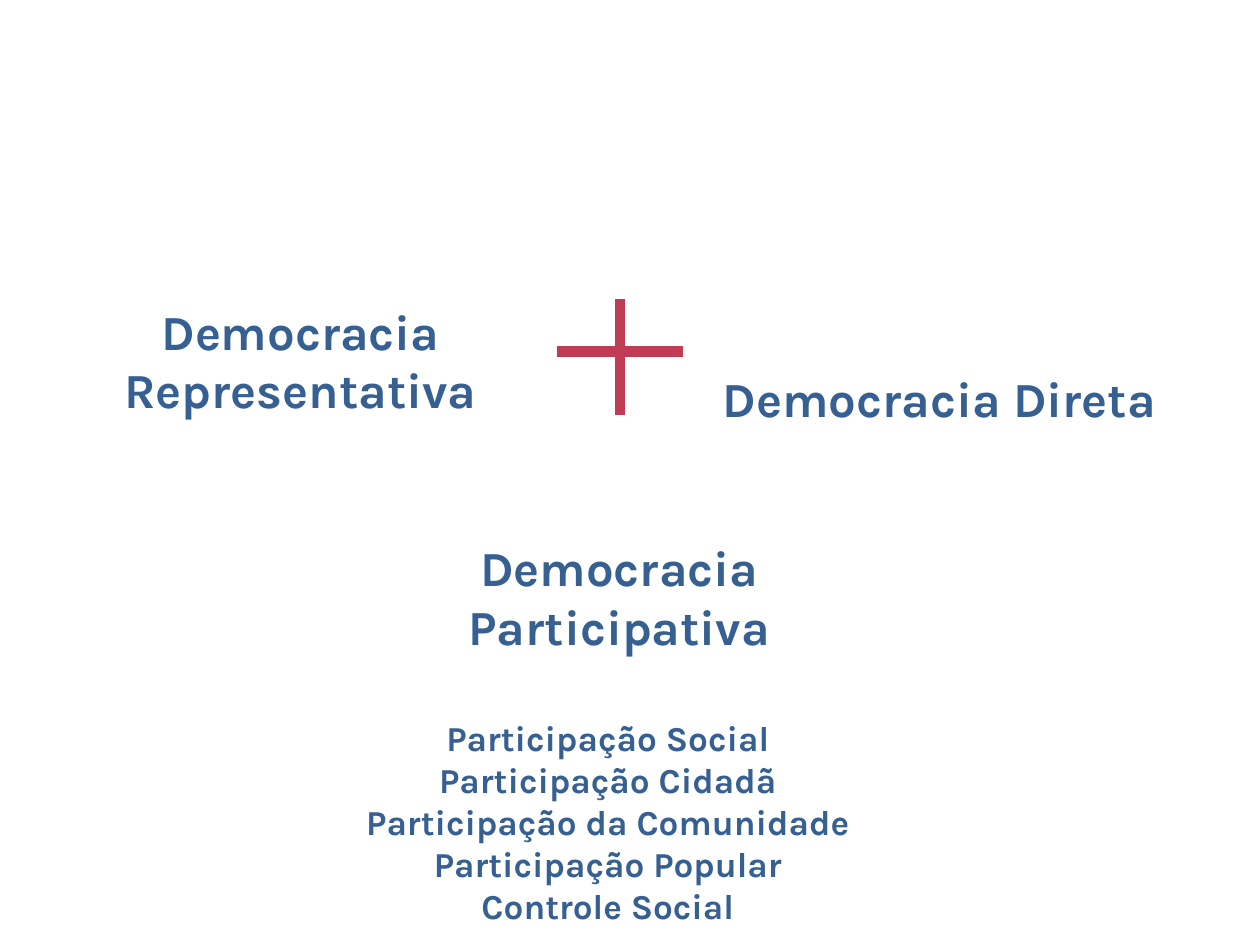
import dataclasses
import pptx
import pptx.util
import pptx.dml.color
import pptx.enum.shapes
import pptx.enum.text
import pptx.oxml.ns
from lxml import etree

Inches = pptx.util.Inches
Anchor = pptx.enum.text.MSO_ANCHOR


@dataclasses.dataclass(frozen=True)
class Theme:
    """Colours, font and sizes of the slide."""
    blue: str = "376092"
    red: str = "C03C55"
    face: str = "Karla"
    head: int = 28
    list: int = 20
    line: int = 6


THEME = Theme()


def color(code):
    """Return the colour for a hex code."""
    return pptx.dml.color.RGBColor.from_string(code)


def add_text(slide, box, lines, size, anchor=Anchor.TOP):
    """Add a box of centred bold lines."""
    frame = slide.shapes.add_textbox(*map(Inches, box)).text_frame
    frame.word_wrap = True
    frame.vertical_anchor = anchor
    frame.text = "\n".join(lines)
    style = {"name": THEME.face, "size": pptx.util.Pt(size), "bold": True}
    for para in frame.paragraphs:
        para.alignment = pptx.enum.text.PP_ALIGN.CENTER
        font = para.runs[0].font
        for key, value in style.items():
            setattr(font, key, value)
        font.color.rgb = color(THEME.blue)


def add_line(slide, start, end):
    """Add one thick stroke of the plus sign."""
    kind = pptx.enum.shapes.MSO_CONNECTOR.STRAIGHT
    stroke = slide.shapes.add_connector(kind, *map(Inches, start + end))
    stroke.line.color.rgb = color(THEME.red)
    stroke.line.width = pptx.util.Pt(THEME.line)
    props = stroke._element.spPr
    etree.SubElement(props, pptx.oxml.ns.qn("a:effectLst"))


def main():
    """Build and save the slide."""
    deck = pptx.Presentation()
    deck.slide_width, deck.slide_height = Inches(10), Inches(7.5)
    slide = deck.slides.add_slide(deck.slide_layouts[6])
    size = (3.67, 1.25)
    heads = [
        ("Democracia Representativa", (0.55, 2.34), Anchor.TOP),
        ("Democracia Direta", (5.62, 2.19), Anchor.BOTTOM),
        ("Democracia Participativa", (3.08, 4.22), Anchor.TOP),
    ]
    for text, place, anchor in heads:
        add_text(slide, place + size, [text], THEME.head, anchor)
    add_line(slide, (4.42, 2.79), (5.42, 2.79))
    add_line(slide, (4.92, 2.37), (4.92, 3.29))
    forms = [
        "Participação Social",
        "Participação Cidadã",
        "Participação da Comunidade",
        "Participação Popular",
        "Controle Social",
    ]
    add_text(slide, (0.55, 5.64, 8.55, 1.86), forms, THEME.list)
    deck.save("out.pptx")


if __name__ == "__main__":
    main()
